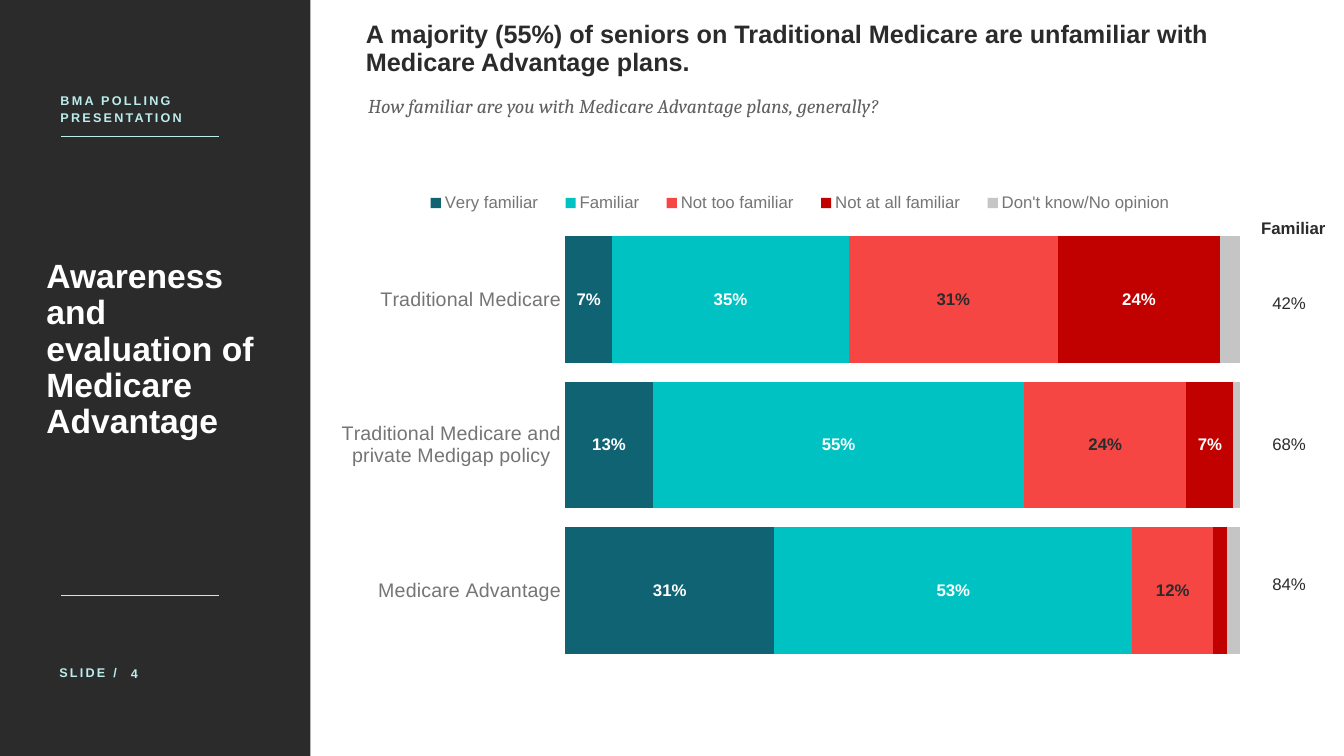
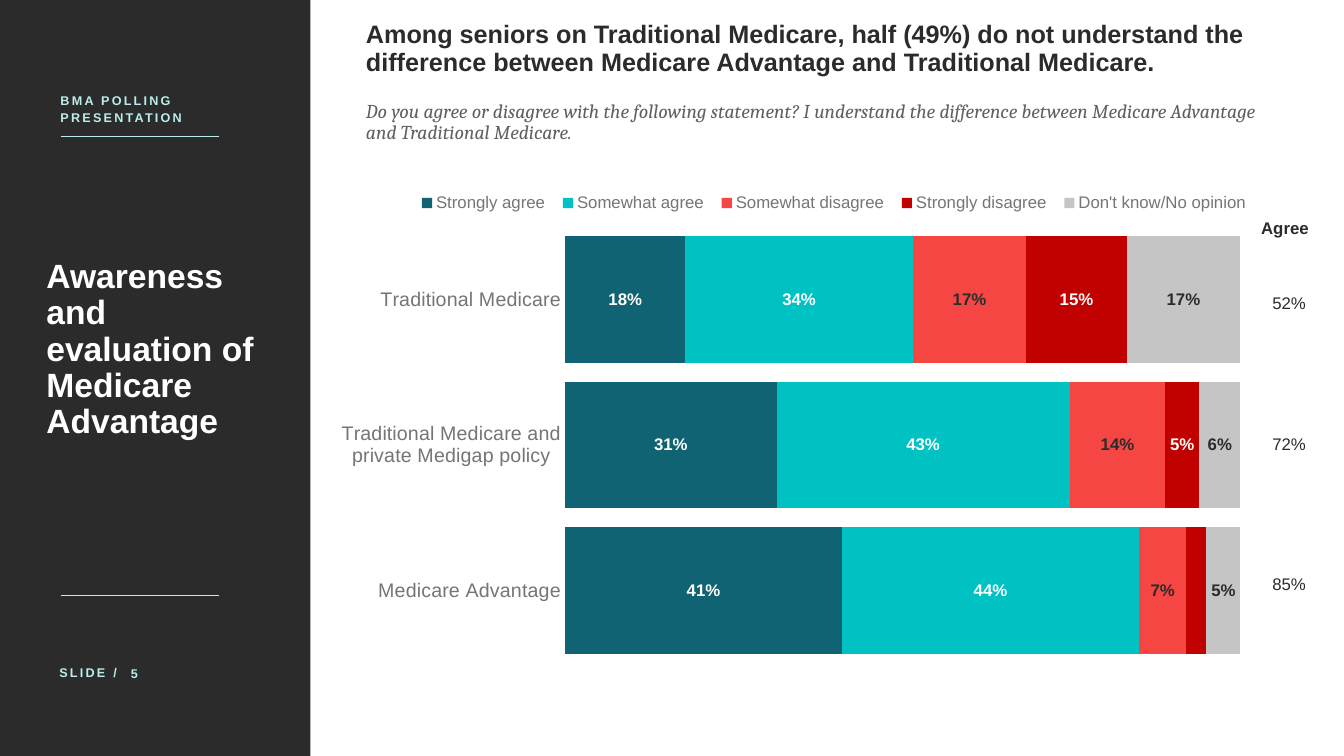
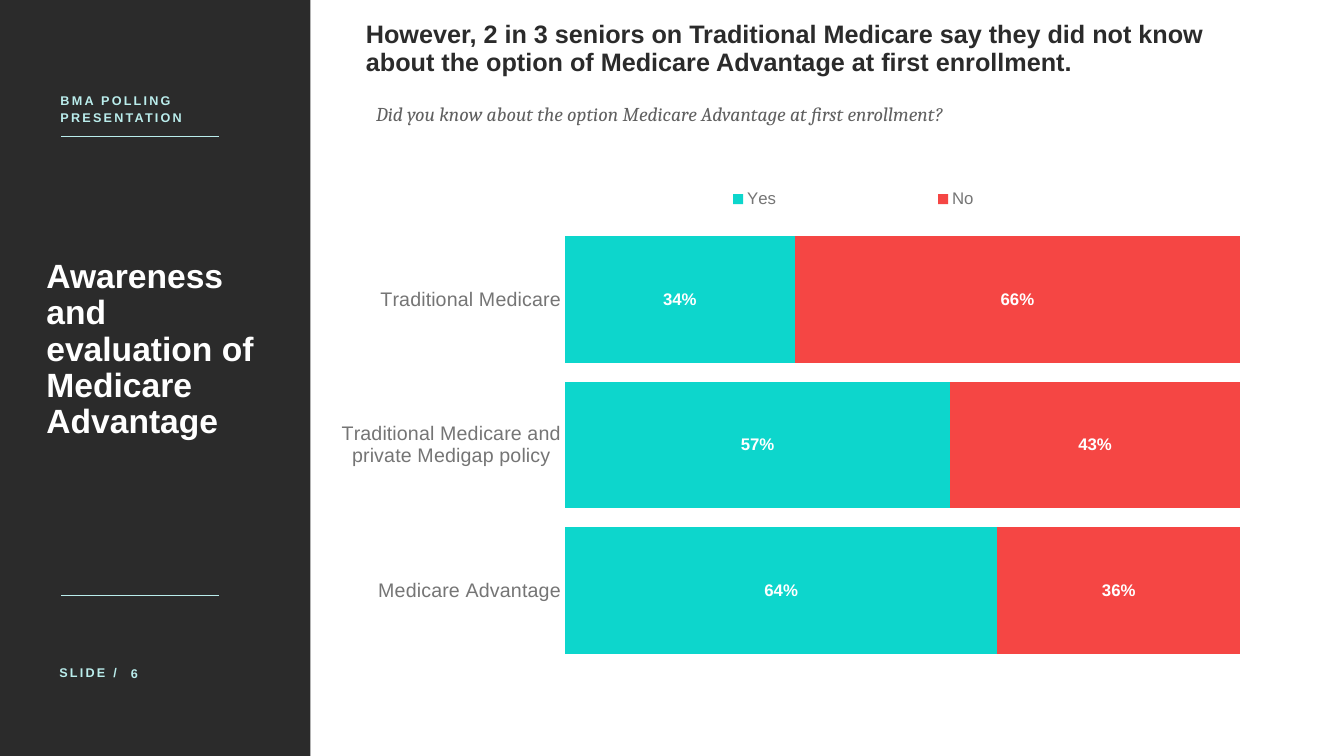
"""Build three polling slides on seniors' awareness of Medicare Advantage."""
from lxml import etree
from pptx import Presentation
from pptx.chart.data import CategoryChartData
from pptx.dml.color import RGBColor
from pptx.enum.chart import XL_CHART_TYPE as ChartType
from pptx.enum.chart import XL_LABEL_POSITION as LabelPosition
from pptx.enum.chart import XL_LEGEND_POSITION as LegendPosition
from pptx.enum.chart import XL_TICK_MARK as TickMark
from pptx.enum.shapes import MSO_CONNECTOR as Connector
from pptx.enum.shapes import MSO_SHAPE as Shape
from pptx.enum.text import MSO_ANCHOR as Anchor
from pptx.oxml import parse_xml
from pptx.oxml.ns import nsdecls, qn
from pptx.util import Inches, Pt

DARK = RGBColor(0x2B, 0x2B, 0x2B)
MINT = RGBColor(0xBA, 0xED, 0xEC)
WHITE = RGBColor(0xFF, 0xFF, 0xFF)
GREY_TEXT = RGBColor(0x60, 0x60, 0x60)
AXIS_TEXT = RGBColor(0x75, 0x75, 0x75)
DEEP_TEAL = RGBColor(0x0F, 0x63, 0x73)
TEAL = RGBColor(0x00, 0xC2, 0xC2)
AQUA = RGBColor(0x0D, 0xD6, 0xCC)
CORAL = RGBColor(0xF5, 0x46, 0x44)
RED = RGBColor(0xC0, 0x01, 0x00)
SILVER = RGBColor(0xC5, 0xC5, 0xC5)

TAG = {"size": Pt(9), "bold": True, "color": MINT, "tracking": 160}
SECTION = {"size": Pt(24), "bold": True, "color": WHITE}
TITLE = {"size": Pt(18), "bold": True, "color": DARK}
QUESTION = {"size": Pt(14), "italic": True, "color": GREY_TEXT, "name": "Cambria"}
TOTAL = {"size": Pt(12), "color": DARK}
TOTAL_HEAD = {**TOTAL, "bold": True}

CATEGORIES = [
    "Traditional Medicare",
    "Traditional Medicare and\nprivate Medigap policy",
    "Medicare Advantage",
]
PLOT_AREA = (0.2637, 0.088, 0.7162, 0.894)

SLIDES = [
    {
        "number": 4,
        "title": "A majority (55%) of seniors on Traditional Medicare are unfamiliar with Medicare Advantage plans.",
        "question": "How familiar are you with Medicare Advantage plans, generally?",
        "question_at": (3.65, 0.96),
        "legend": (0.098, 0.005, 0.83, 0.07),
        "series": [
            ("Very familiar", (0.07, 0.13, 0.31), DEEP_TEAL, WHITE),
            ("Familiar", (0.35, 0.55, 0.53), TEAL, WHITE),
            ("Not too familiar", (0.31, 0.24, 0.12), CORAL, DARK),
            ("Not at all familiar", (0.24, 0.07, 0.02), RED, WHITE),
            ("Don't know/No opinion", (0.03, 0.01, 0.02), SILVER, None),
        ],
        "total_head": "Familiar",
        "totals": ["42%", "68%", "84%"],
    },
    {
        "number": 5,
        "title": "Among seniors on Traditional Medicare, half (49%) do not understand the difference between Medicare Advantage and Traditional Medicare.",
        "question": "Do you agree or disagree with the following statement? I understand the difference between Medicare Advantage and Traditional Medicare.",
        "question_at": (3.63, 1.01),
        "legend": (0.099, 0.005, 0.9, 0.07),
        "series": [
            ("Strongly agree", (0.18, 0.31, 0.41), DEEP_TEAL, WHITE),
            ("Somewhat agree", (0.34, 0.43, 0.44), TEAL, WHITE),
            ("Somewhat disagree", (0.17, 0.14, 0.07), CORAL, DARK),
            ("Strongly disagree", (0.15, 0.05, 0.03), RED, WHITE),
            ("Don't know/No opinion", (0.17, 0.06, 0.05), SILVER, DARK),
        ],
        "total_head": "Agree",
        "totals": ["52%", "72%", "85%"],
    },
    {
        "number": 6,
        "title": "However, 2 in 3 seniors on Traditional Medicare say they did not know about the option of Medicare Advantage at first enrollment.",
        "question": "Did you know about the option Medicare Advantage at first enrollment?",
        "question_at": (3.73, 1.04),
        "legend": (0.276, 0, 0.587, 0.064),
        "series": [
            ("Yes", (0.34, 0.57, 0.64), AQUA, WHITE),
            ("No", (0.66, 0.43, 0.36), CORAL, WHITE),
        ],
        "total_head": None,
        "totals": [],
    },
]


def add_text(page, text, place, style, anchor=Anchor.TOP, spacing=None, padded=False, wrap=True):
    box = page.shapes.add_textbox(*map(Inches, place))
    frame = box.text_frame
    frame.word_wrap = wrap
    frame.vertical_anchor = anchor
    if not padded:
        for side in ("left", "top", "right", "bottom"):
            setattr(frame, f"margin_{side}", 0)
    para = frame.paragraphs[0]
    para.line_spacing = spacing
    span = para.add_run()
    span.text = text
    for key, value in {"name": "Arial", **style}.items():
        if key == "color":
            span.font.color.rgb = value
        elif key == "tracking":
            span._r.get_or_add_rPr().set("spc", str(value))
        else:
            setattr(span.font, key, value)


def make_layout(fractions, inner=False):
    target = '<c:layoutTarget val="inner"/>' if inner else ""
    sizes = "".join(f'<c:{key} val="{value}"/>' for key, value in zip("xywh", fractions))
    return parse_xml(
        f'<c:layout {nsdecls("c")}><c:manualLayout>{target}'
        f'<c:xMode val="edge"/><c:yMode val="edge"/>{sizes}</c:manualLayout></c:layout>'
    )


deck = Presentation()
deck.slide_width = Inches(13.33)
deck.slide_height = Inches(7.5)

for content in SLIDES:
    page = deck.slides.add_slide(deck.slide_layouts[6])

    sidebar = page.shapes.add_shape(Shape.RECTANGLE, 0, 0, Inches(3.08), deck.slide_height)
    sidebar.shadow.inherit = False
    sidebar.fill.solid()
    sidebar.fill.fore_color.rgb = DARK
    sidebar.line.fill.background()
    for y in (1.35, 5.91):
        rule = page.shapes.add_connector(
            Connector.STRAIGHT, Inches(0.61), Inches(y), Inches(2.17), Inches(y)
        )
        rule.line.color.rgb = MINT
        rule.line.width = Pt(0.5)
        etree.SubElement(rule._element.spPr, qn("a:effectLst"))
    add_text(page, "BMA POLLING PRESENTATION", (0.6, 0.75, 1.72, 0.49), TAG, Anchor.BOTTOM, Pt(11.8))
    add_text(page, "Awareness and evaluation of Medicare Advantage",
             (0.46, 2.26, 2.25, 2.43), SECTION, Anchor.MIDDLE, 0.9)
    add_text(page, "SLIDE /", (0.49, 6.55, 0.8, 0.25), TAG, padded=True, wrap=False)
    add_text(page, str(content["number"]), (1.2, 6.48, 0.52, 0.4), TAG, Anchor.MIDDLE, padded=True)

    add_text(page, content["title"], (3.63, 0.22, 9.03, 0.61), TITLE, spacing=0.9)
    add_text(page, content["question"], (*content["question_at"], 9.02, 0.55), QUESTION, spacing=0.9)

    data = CategoryChartData(number_format="0%")
    data.categories = CATEGORIES
    for name, values, fill, label_color in content["series"]:
        data.add_series(name, values)
    chart = page.shapes.add_chart(
        ChartType.BAR_STACKED_100, Inches(3.14), Inches(1.82), Inches(9.35), Inches(4.85), data
    ).chart
    chart.has_title = False
    chart.has_legend = True
    chart.legend.position = LegendPosition.TOP
    chart.legend.include_in_layout = False
    chart.legend._element.insert(1, make_layout(content["legend"]))
    plot_area = chart._chartSpace.chart.plotArea
    for automatic in plot_area.findall(qn("c:layout")):
        plot_area.remove(automatic)
    plot_area.insert(0, make_layout(PLOT_AREA, inner=True))

    category_axis = chart.category_axis
    category_axis.reverse_order = True
    category_axis.major_tick_mark = TickMark.NONE
    category_axis.format.line.fill.background()
    value_axis = chart.value_axis
    value_axis.has_major_gridlines = False
    value_axis.minimum_scale = 0
    value_axis.maximum_scale = 1
    value_axis.visible = False
    for font, size, color in (
        (chart.font, 10, DARK),
        (chart.legend.font, 12, AXIS_TEXT),
        (category_axis.tick_labels.font, 14, AXIS_TEXT),
    ):
        font.name = "Arial"
        font.size = Pt(size)
        font.color.rgb = color

    plot = chart.plots[0]
    plot.gap_width = 15
    plot.overlap = 100
    plot.vary_by_categories = False
    for series, (name, values, fill, label_color) in zip(plot.series, content["series"]):
        series.format.fill.solid()
        series.format.fill.fore_color.rgb = fill
        if label_color is None:
            continue
        labels = series.data_labels
        labels.show_value = True
        labels.position = LabelPosition.CENTER
        labels.number_format = "0%"
        labels.number_format_is_linked = False
        labels.font.name = "Arial"
        labels.font.size = Pt(12)
        labels.font.bold = True
        labels.font.color.rgb = label_color
        for index, value in enumerate(values):
            if value < 0.05:
                labels._element.insert(0, parse_xml(
                    f'<c:dLbl {nsdecls("c")}><c:idx val="{index}"/><c:delete val="1"/></c:dLbl>'
                ))

    if content["total_head"]:
        add_text(page, content["total_head"], (12.41, 2.11, 0.92, 0.3), TOTAL_HEAD, padded=True)
    for row, total in enumerate(content["totals"]):
        add_text(page, total, (12.52, 2.86 + 1.39 * row, 0.81, 0.3), TOTAL, padded=True)

deck.save("out.pptx")
